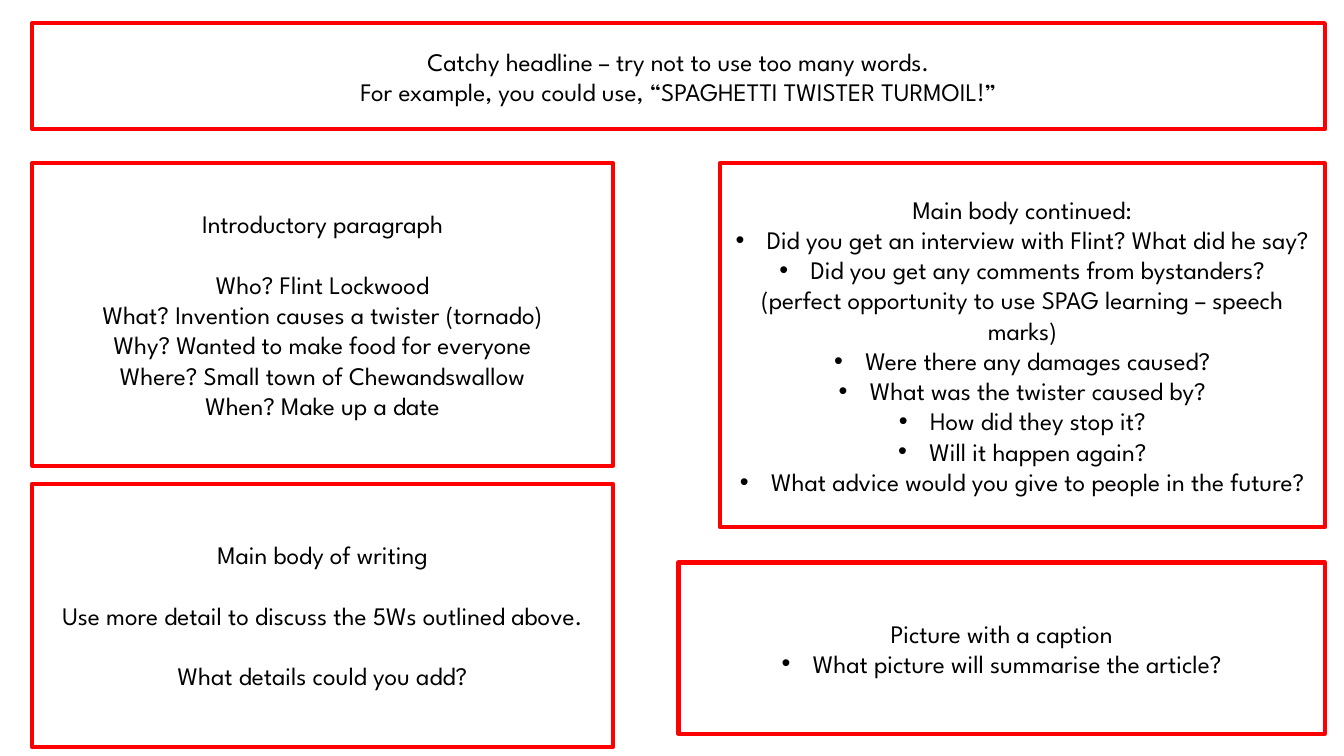
import pptx
import pptx.dml.color
import pptx.enum.shapes
import pptx.enum.text
import pptx.oxml.ns
import pptx.util
from lxml import etree

PX = 9144  # EMU; 100 px to the inch
FONT = "League Spartan"
TEXT_SIZE = 18
LINE_HEIGHT = 21.6
BULLET_INDENT = 31

LEFT, RIGHT = 32, 1314
INTRO_TOP = 162
LEFT_COLUMN = 576

PLAIN, BULLET, SPACED = "plain", "bullet", "spaced"

HEADLINE = [
    (PLAIN, "Catchy headline – try not to use too many words."),
    (PLAIN, "For example, you could use, “SPAGHETTI TWISTER TURMOIL!”"),
]
INTRODUCTION = [
    (PLAIN, "Introductory paragraph"),
    (SPACED, "Who? Flint Lockwood"),
    (PLAIN, "What? Invention causes a twister (tornado)"),
    (PLAIN, "Why? Wanted to make food for everyone"),
    (PLAIN, "Where? Small town of Chewandswallow"),
    (PLAIN, "When? Make up a date"),
]
MAIN_BODY = [
    (PLAIN, "Main body of writing"),
    (SPACED, "Use more detail to discuss the 5Ws outlined above."),
    (SPACED, "What details could you add?"),
]
MAIN_BODY_CONTINUED = [
    (PLAIN, "Main body continued:"),
    (BULLET, "Did you get an interview with Flint? What did he say?"),
    (BULLET, "Did you get any comments from bystanders?"),
    (PLAIN, "(perfect opportunity to use SPAG learning – speech marks)"),
    (BULLET, "Were there any damages caused?"),
    (BULLET, "What was the twister caused by?"),
    (BULLET, "How did they stop it?"),
    (BULLET, "Will it happen again?"),
    (BULLET, "What advice would you give to people in the future?"),
]
CAPTIONED_PICTURE = [
    (PLAIN, "Picture with a caption"),
    (BULLET, "What picture will summarise the article?"),
]


def px(length):
    return pptx.util.Emu(length * PX)


def color(hex_string):
    return pptx.dml.color.RGBColor.from_string(hex_string)


def add_bullet(paragraph):
    properties = paragraph._p.get_or_add_pPr()
    properties.set("marL", str(px(BULLET_INDENT)))
    properties.set("indent", str(px(-BULLET_INDENT)))
    bullet_font = etree.SubElement(properties, pptx.oxml.ns.qn("a:buFont"))
    bullet_font.set("typeface", "Arial")
    bullet = etree.SubElement(properties, pptx.oxml.ns.qn("a:buChar"))
    bullet.set("char", "•")


def write_line(paragraph, kind, text):
    paragraph.alignment = pptx.enum.text.PP_ALIGN.CENTER
    if kind == SPACED:
        paragraph.space_before = pptx.util.Pt(LINE_HEIGHT)
    elif kind == BULLET:
        add_bullet(paragraph)
    run = paragraph.add_run()
    run.text = text
    run.font.name = FONT
    run.font.size = pptx.util.Pt(TEXT_SIZE)
    run.font.color.rgb = color("000000")


def add_article_box(slide, left, top, width, height, lines):
    box = slide.shapes.add_shape(
        pptx.enum.shapes.MSO_SHAPE.RECTANGLE,
        px(left), px(top), px(width), px(height))
    box.shadow.inherit = False
    box.fill.solid()
    box.fill.fore_color.rgb = color("FFFFFF")
    box.line.color.rgb = color("FF0000")
    box.line.width = pptx.util.Pt(3)

    frame = box.text_frame
    frame.word_wrap = True
    frame.vertical_anchor = pptx.enum.text.MSO_ANCHOR.MIDDLE
    for number, (kind, text) in enumerate(lines):
        paragraph = frame.add_paragraph() if number else frame.paragraphs[0]
        write_line(paragraph, kind, text)


def main():
    presentation = pptx.Presentation()
    presentation.slide_width = px(1333)
    presentation.slide_height = px(750)
    slide = presentation.slides.add_slide(presentation.slide_layouts[6])

    add_article_box(slide, LEFT, 23, RIGHT - LEFT, 105, HEADLINE)
    add_article_box(slide, LEFT, INTRO_TOP, LEFT_COLUMN, 300, INTRODUCTION)
    add_article_box(slide, LEFT, 480, LEFT_COLUMN, 261, MAIN_BODY)
    add_article_box(slide, 714, INTRO_TOP, RIGHT - 714, 361, MAIN_BODY_CONTINUED)
    add_article_box(slide, 673, 558, RIGHT - 673, 170, CAPTIONED_PICTURE)

    presentation.save("out.pptx")


if __name__ == "__main__":
    main()
